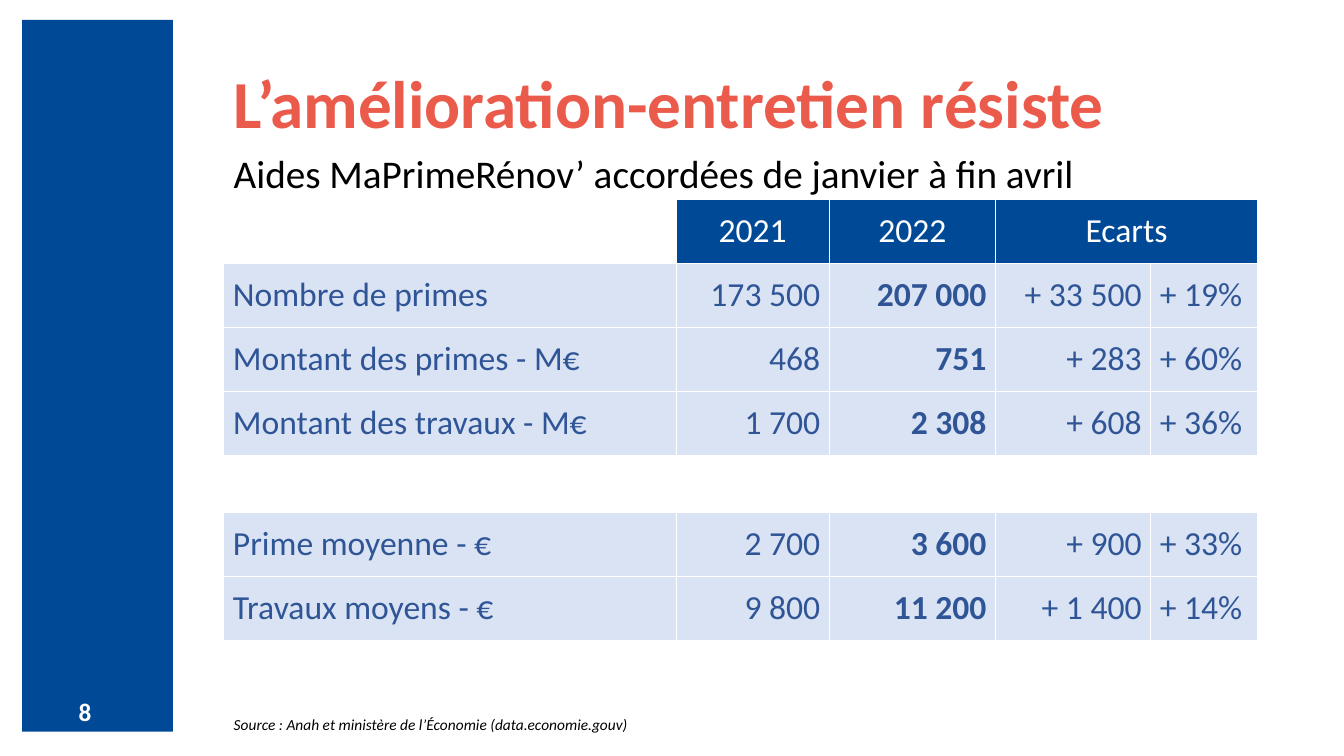
from dataclasses import dataclass

from lxml import etree
from pptx import Presentation
from pptx.dml.color import RGBColor
from pptx.enum.shapes import MSO_SHAPE
from pptx.enum.text import MSO_ANCHOR, PP_ALIGN
from pptx.oxml.ns import qn
from pptx.util import Cm, Pt

RECTANGLE = MSO_SHAPE.RECTANGLE
MIDDLE = MSO_ANCHOR.MIDDLE
LEFT, CENTER, RIGHT = PP_ALIGN.LEFT, PP_ALIGN.CENTER, PP_ALIGN.RIGHT


@dataclass(frozen=True)
class Theme:
    font: str = "Calibri"
    blue: str = "004996"
    coral: str = "EB5B4C"
    pale: str = "DAE3F3"
    figure: str = "2F5597"
    white: str = "FFFFFF"
    black: str = "000000"
    title_size: int = 48
    subtitle_size: int = 28
    table_size: int = 24
    number_size: int = 18
    source_size: int = 11


THEME = Theme()
BLANK_LAYOUT = 6
CONTENT_LEFT = 5.64
CONTENT_WIDTH = 27.08
COLUMN_WIDTHS = (11.4, 3.86, 4.19, 3.91, 2.69)
COLUMN_ALIGNMENTS = (LEFT, RIGHT, RIGHT, RIGHT, LEFT)
ROW_HEIGHT = 1.61
GAP_ROW_HEIGHT = 1.44
CELL_INSET = 0.23
CURRENT_YEAR_COLUMN = 2
HEADER = ("", "2021", "2022", "Ecarts", "")
BODY = (
    ("Nombre de primes", "173 500", "207 000", "+ 33 500", "+ 19%"),
    ("Montant des primes - M€", "468", "751", "+ 283", "+ 60%"),
    ("Montant des travaux - M€", "1 700", "2 308", "+ 608", "+ 36%"),
    ("", "", "", "", ""),
    ("Prime moyenne - €", "2 700", "3 600", "+ 900", "+ 33%"),
    ("Travaux moyens - €", "9 800", "11 200", "+ 1 400", "+ 14%"),
)


def write_text(frame, text, *, size, color, bold=False, italic=False,
               align=LEFT, line_spacing=1.0):
    para = frame.paragraphs[0]
    para.alignment = align
    para.line_spacing = line_spacing
    span = para.add_run()
    span.text = text
    span.font.name = THEME.font
    span.font.size = Pt(size)
    span.font.bold = bold
    span.font.italic = italic
    span.font.color.rgb = RGBColor.from_string(color)


def add_text(page, text, left, top, width, height, **text_format):
    box = page.shapes.add_textbox(Cm(left), Cm(top), Cm(width), Cm(height))
    box.text_frame.word_wrap = True
    write_text(box.text_frame, text, **text_format)


def add_side_band(page):
    band = page.shapes.add_shape(RECTANGLE, Cm(0.56), Cm(0.5), Cm(3.8), Cm(17.94))
    band.shadow.inherit = False
    band.fill.solid()
    band.fill.fore_color.rgb = RGBColor.from_string(THEME.blue)
    band.line.fill.background()


def add_borders(cell):
    properties = cell._tc.get_or_add_tcPr()
    for side in ("a:lnL", "a:lnR", "a:lnT", "a:lnB"):
        line = etree.SubElement(properties, qn(side), w=str(Pt(1)))
        fill = etree.SubElement(line, qn("a:solidFill"))
        etree.SubElement(fill, qn("a:srgbClr"), val=THEME.white)


def fill_cell(cell, text, *, fill, align, **text_format):
    add_borders(cell)
    if not text:
        cell.fill.background()
        return
    cell.fill.solid()
    cell.fill.fore_color.rgb = RGBColor.from_string(fill)
    cell.vertical_anchor = MIDDLE
    cell.margin_left = Cm(CELL_INSET if align == LEFT else 0)
    cell.margin_right = Cm(CELL_INSET if align == RIGHT else 0)
    cell.margin_top = cell.margin_bottom = Cm(0)
    write_text(cell.text_frame, text, size=THEME.table_size, align=align, **text_format)


def add_grants_table(page):
    heights = [ROW_HEIGHT] + [ROW_HEIGHT if any(row) else GAP_ROW_HEIGHT for row in BODY]
    table = page.shapes.add_table(
        len(heights), len(COLUMN_WIDTHS), Cm(CONTENT_LEFT), Cm(5.03),
        Cm(sum(COLUMN_WIDTHS)), Cm(sum(heights))).table
    table.first_row = False
    table.horz_banding = False
    for column, width in zip(table.columns, COLUMN_WIDTHS):
        column.width = Cm(width)
    for row, height in zip(table.rows, heights):
        row.height = Cm(height)
    for column, text in enumerate(HEADER):
        fill_cell(table.cell(0, column), text, fill=THEME.blue,
                  align=CENTER, color=THEME.white)
    table.cell(0, 3).merge(table.cell(0, 4))
    for row, values in enumerate(BODY, start=1):
        for column, text in enumerate(values):
            fill_cell(table.cell(row, column), text, fill=THEME.pale,
                      align=COLUMN_ALIGNMENTS[column], color=THEME.figure,
                      bold=column == CURRENT_YEAR_COLUMN)


def main():
    deck = Presentation()
    deck.slide_width, deck.slide_height = Cm(33.87), Cm(19.05)
    page = deck.slides.add_slide(deck.slide_layouts[BLANK_LAYOUT])
    add_side_band(page)
    add_text(page, "8", 1.73, 17.42, 1.42, 1.02,
             size=THEME.number_size, color=THEME.white, bold=True)
    add_text(page, "L’amélioration-entretien résiste",
             CONTENT_LEFT, 1.65, CONTENT_WIDTH, 2.11,
             size=THEME.title_size, color=THEME.coral, bold=True, line_spacing=0.9)
    add_text(page, "Source : Anah et ministère de l’Économie (data.economie.gouv)",
             CONTENT_LEFT, 17.96, 13.56, 0.66,
             size=THEME.source_size, color=THEME.black, italic=True, line_spacing=0.9)
    add_text(page, "Aides MaPrimeRénov’ accordées de janvier à fin avril",
             CONTENT_LEFT, 3.78, CONTENT_WIDTH, 1.27,
             size=THEME.subtitle_size, color=THEME.black, line_spacing=0.9)
    add_grants_table(page)
    deck.save("out.pptx")


if __name__ == "__main__":
    main()
